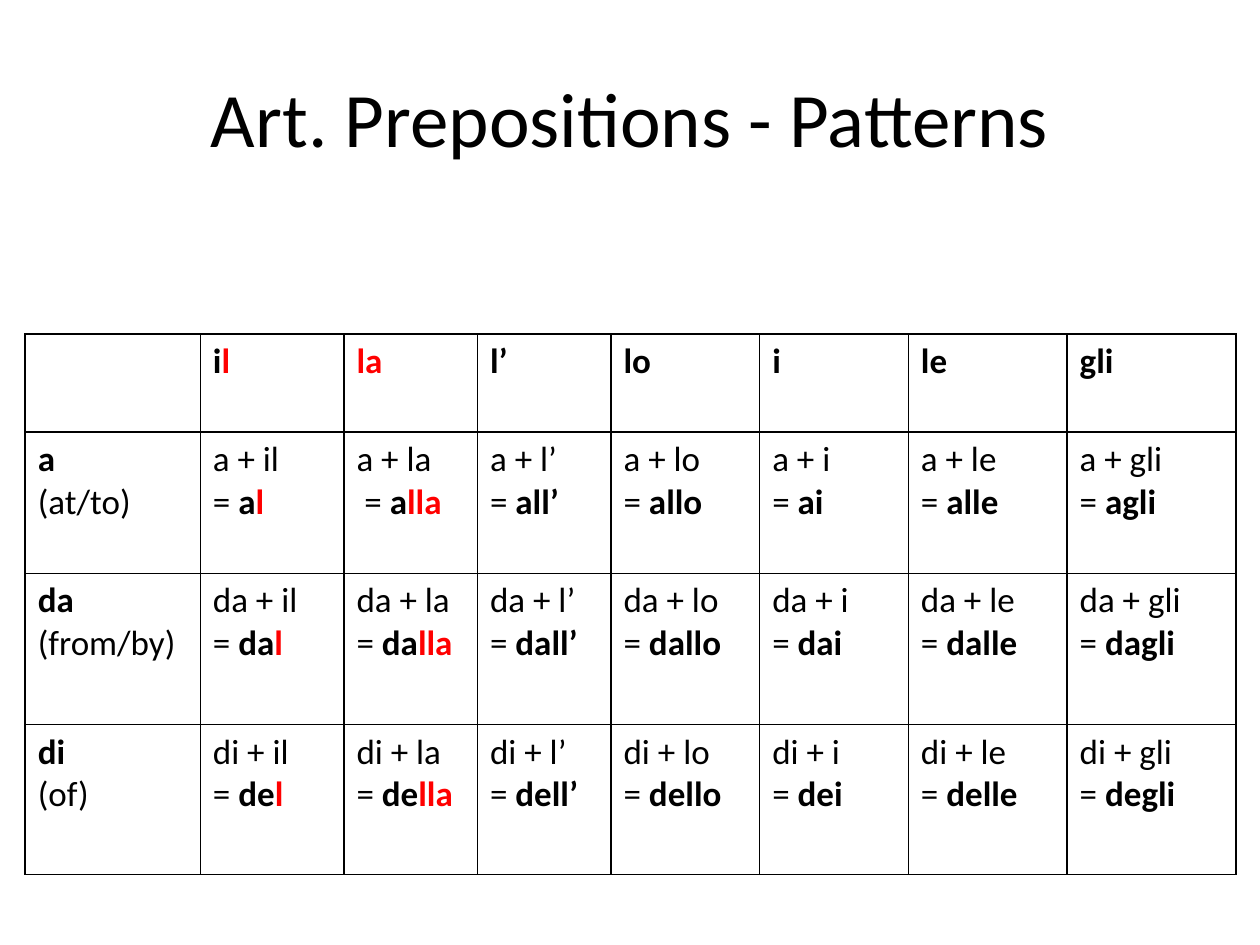
from lxml import etree
from pptx import Presentation
from pptx.dml.color import RGBColor
from pptx.enum.text import MSO_ANCHOR, PP_ALIGN
from pptx.oxml.ns import qn
from pptx.util import Inches, Pt

MIDDLE = MSO_ANCHOR.MIDDLE
CENTER = PP_ALIGN.CENTER
BLACK = RGBColor(0, 0, 0)
RED = RGBColor(255, 0, 0)
FONT = "Calibri"

SLIDE_W, SLIDE_H = Inches(10), Inches(7.5)
TABLE_LEFT, TABLE_TOP = 0.2, 2.65
COLUMN_WIDTHS = [1.39, 1.14, 1.06, 1.06, 1.18, 1.18, 1.26, 1.34]
ROW_HEIGHTS = [0.78, 1.12, 1.2, 1.19]

# Article as (black part, red part), then the ending it gives a preposition
ARTICLES = [
    (("i", "l"), "l"),
    (("", "la"), "lla"),
    (("l’", ""), "ll’"),
    (("lo", ""), "llo"),
    (("i", ""), "i"),
    (("le", ""), "lle"),
    (("gli", ""), "gli"),
]
# Preposition, meaning, stem of the joined form
PREPOSITIONS = [("a", "(at/to)", "a"), ("da", "(from/by)", "da"), ("di", "(of)", "de")]


def add_span(para, text, size=20, bold=False, color=BLACK):
    if not text:
        return
    span = para.add_run()
    span.text = text
    span.font.name = FONT
    span.font.size = Pt(size)
    span.font.bold = bold
    span.font.color.rgb = color


def add_title(page, text):
    box = page.shapes.add_textbox(
        int(SLIDE_W * 0.05), int(SLIDE_H * 0.04), int(SLIDE_W * 0.9), Inches(1.25))
    frame = box.text_frame
    frame.word_wrap = True
    frame.vertical_anchor = MIDDLE
    frame.paragraphs[0].alignment = CENTER
    add_span(frame.paragraphs[0], text, size=44)


def outline_cell(cell):
    """Draw a thin black border on all four sides."""
    properties = cell._tc.get_or_add_tcPr()
    for position, side in enumerate(("a:lnL", "a:lnR", "a:lnT", "a:lnB")):
        line = etree.Element(qn(side), w=str(Pt(1)))
        fill = etree.SubElement(line, qn("a:solidFill"))
        etree.SubElement(fill, qn("a:srgbClr"), val=str(BLACK))
        properties.insert(position, line)


def add_grid(page):
    table = page.shapes.add_table(
        len(ROW_HEIGHTS), len(COLUMN_WIDTHS), Inches(TABLE_LEFT), Inches(TABLE_TOP),
        Inches(sum(COLUMN_WIDTHS)), Inches(sum(ROW_HEIGHTS))).table
    table.first_row = table.horz_banding = False
    for column, width in zip(table.columns, COLUMN_WIDTHS):
        column.width = Inches(width)
    for row, height in zip(table.rows, ROW_HEIGHTS):
        row.height = Inches(height)
    for cell in table.iter_cells():
        cell.fill.background()
        outline_cell(cell)
    return table


def fill_header(cell, black, red):
    para = cell.text_frame.paragraphs[0]
    add_span(para, black, bold=True)
    add_span(para, red, bold=True, color=RED)


def fill_preposition(cell, word, meaning):
    frame = cell.text_frame
    add_span(frame.paragraphs[0], word, bold=True)
    add_span(frame.add_paragraph(), meaning)


def fill_contraction(cell, word, article, stem, ending, red, sign="= "):
    frame = cell.text_frame
    add_span(frame.paragraphs[0], f"{word} + {article}")
    result = frame.add_paragraph()
    add_span(result, sign)
    if red:
        add_span(result, stem, bold=True)
        add_span(result, ending, bold=True, color=RED)
    else:
        add_span(result, stem + ending, bold=True)


def main():
    deck = Presentation()
    deck.slide_width, deck.slide_height = SLIDE_W, SLIDE_H
    page = deck.slides.add_slide(deck.slide_layouts[6])
    add_title(page, "Art. Prepositions - Patterns")

    table = add_grid(page)
    for col, (parts, _) in enumerate(ARTICLES, start=1):
        fill_header(table.cell(0, col), *parts)
    for row, (word, meaning, stem) in enumerate(PREPOSITIONS, start=1):
        fill_preposition(table.cell(row, 0), word, meaning)
        for col, ((black, red), ending) in enumerate(ARTICLES, start=1):
            article = black + red
            sign = " = " if (word, article) == ("a", "la") else "= "
            fill_contraction(table.cell(row, col), word, article, stem, ending,
                             red=bool(red), sign=sign)
    deck.save("out.pptx")


if __name__ == "__main__":
    main()
